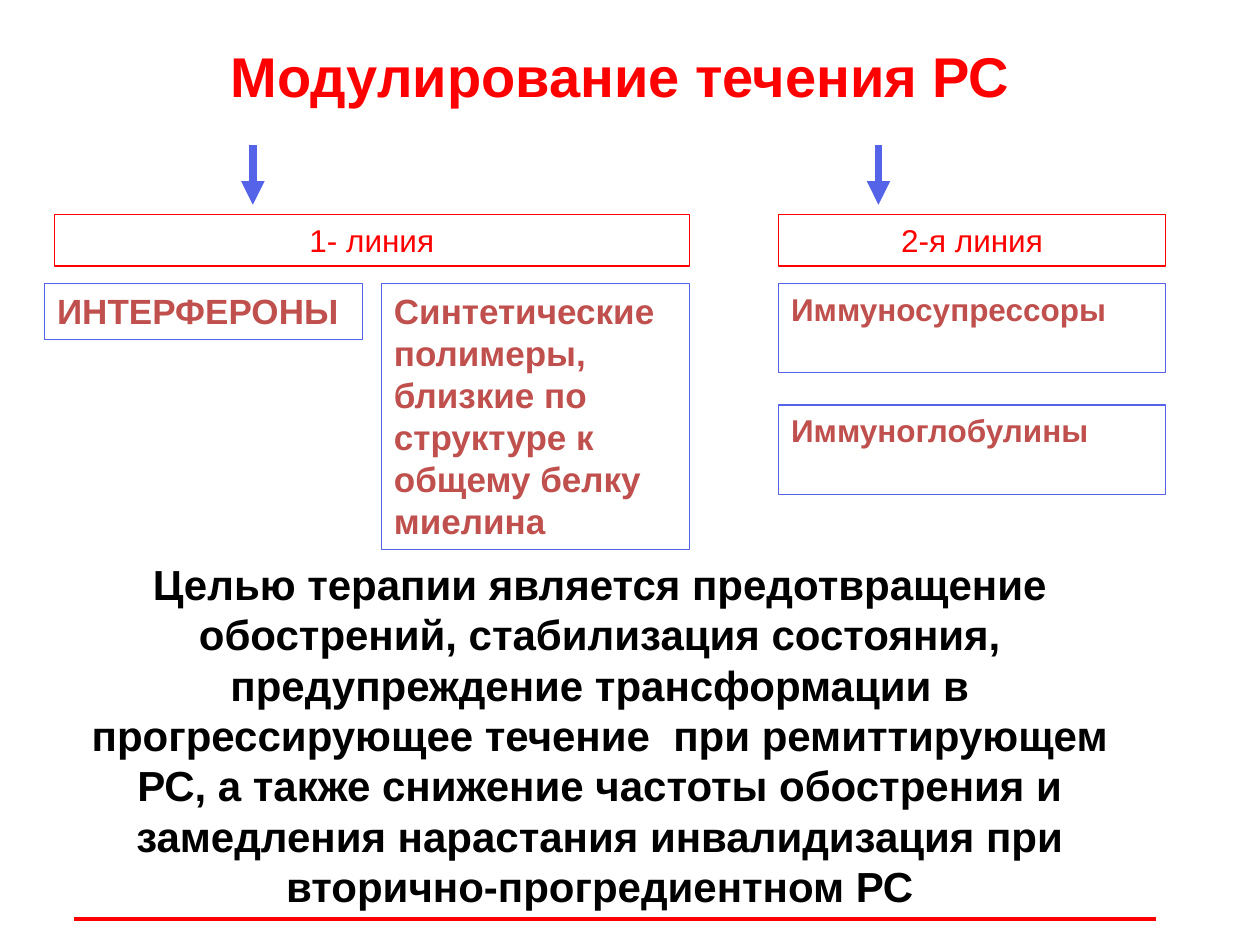
from dataclasses import dataclass

from pptx import Presentation
from pptx.dml.color import RGBColor as RGB
from pptx.enum.shapes import MSO_CONNECTOR as CONN, MSO_SHAPE as SHAPE
from pptx.enum.text import MSO_ANCHOR as ANCHOR, MSO_AUTO_SIZE as AUTO, PP_ALIGN as ALIGN
from pptx.oxml.ns import qn
from pptx.util import Pt
from lxml.etree import SubElement


@dataclass(frozen=True)
class Theme:
    font: str = "Arial"
    red: RGB = RGB(0xFF, 0, 0)
    blue: RGB = RGB(0x55, 0x63, 0xE9)
    brick: RGB = RGB(0xC0, 0x50, 0x4D)
    black: RGB = RGB(0, 0, 0)
    title: int = 32
    goal: int = 24
    drug: int = 20
    label: int = 18


T = Theme()
BOX_W = 0.75
LEFT_X, RIGHT_X = 31, 445
FIRST_W, SECOND_W = 363, 221
LINE_Y, DRUG_Y = 122.5, 162


def write(shape, text, size, color, bold=True, align=ALIGN.LEFT):
    tf = shape.text_frame
    tf.word_wrap = True
    tf.auto_size = AUTO.NONE
    tf.vertical_anchor = ANCHOR.TOP
    p = tf.paragraphs[0]
    p.alignment = align
    r = p.add_run()
    r.text = text
    f = r.font
    f.name, f.size, f.bold = T.font, Pt(size), bold
    f.color.rgb = color


def place(shape, x, y, w, h):
    shape.left, shape.top, shape.width, shape.height = map(Pt, (x, y, w, h))


def add_box(s, text, x, y, w, h, line=T.blue, size=T.label, color=T.brick, **fmt):
    sp = s.shapes.add_shape(SHAPE.RECTANGLE, Pt(x), Pt(y), Pt(w), Pt(h))
    sp.shadow.inherit = False
    sp.fill.background()
    sp.line.color.rgb = line
    sp.line.width = Pt(BOX_W)
    write(sp, text, size, color, **fmt)


def add_line(s, x1, y1, x2, y2, color, width, arrow=False):
    c = s.shapes.add_connector(CONN.STRAIGHT, Pt(x1), Pt(y1), Pt(x2), Pt(y2))
    c.line.color.rgb = color
    c.line.width = Pt(width)
    if arrow:
        SubElement(c.line._get_or_add_ln(), qn("a:tailEnd"), type="triangle")
    SubElement(c._element.spPr, qn("a:effectLst"))


def add_goal(s, text):
    sp = s.shapes.add_textbox(Pt(31), Pt(315.5), Pt(623.5), Pt(209))
    write(sp, text, T.goal, T.black, align=ALIGN.CENTER)


def main():
    prs = Presentation()
    prs.slide_width, prs.slide_height = Pt(720), Pt(540)
    s = prs.slides.add_slide(prs.slide_layouts[5])

    title = s.shapes.title
    place(title, 124.5, 20, 595.5, 84)
    write(title, "Модулирование течения РС", T.title, T.red)

    add_box(s, "ИНТЕРФЕРОНЫ", 25.5, DRUG_Y, 181.5, 32, size=T.drug)
    add_box(s, "Синтетические полимеры, близкие по структуре к общему белку миелина",
            218, DRUG_Y, 176, 152, size=T.drug)
    for x in (144.5, 502):
        add_line(s, x, 83, x, 117, T.blue, 4.5, arrow=True)

    add_goal(s, "Целью терапии является предотвращение обострений, "
                "стабилизация состояния, предупреждение трансформации в "
                "прогрессирующее течение  при ремиттирующем РС, а также "
                "снижение частоты обострения и замедления нарастания "
                "инвалидизация при вторично-прогредиентном РС")
    add_line(s, 42.5, 525, 660.5, 525, T.red, 2.25)

    for i, drug in enumerate(("Иммуносупрессоры", "Иммуноглобулины")):
        add_box(s, drug, RIGHT_X, DRUG_Y + i * 69.5, SECOND_W, 51)
    for text, x, w in (("1- линия", LEFT_X, FIRST_W), ("2-я линия", RIGHT_X, SECOND_W)):
        add_box(s, text, x, LINE_Y, w, 29.5, line=T.red, color=T.red,
                bold=False, align=ALIGN.CENTER)

    prs.save("out.pptx")


if __name__ == "__main__":
    main()
